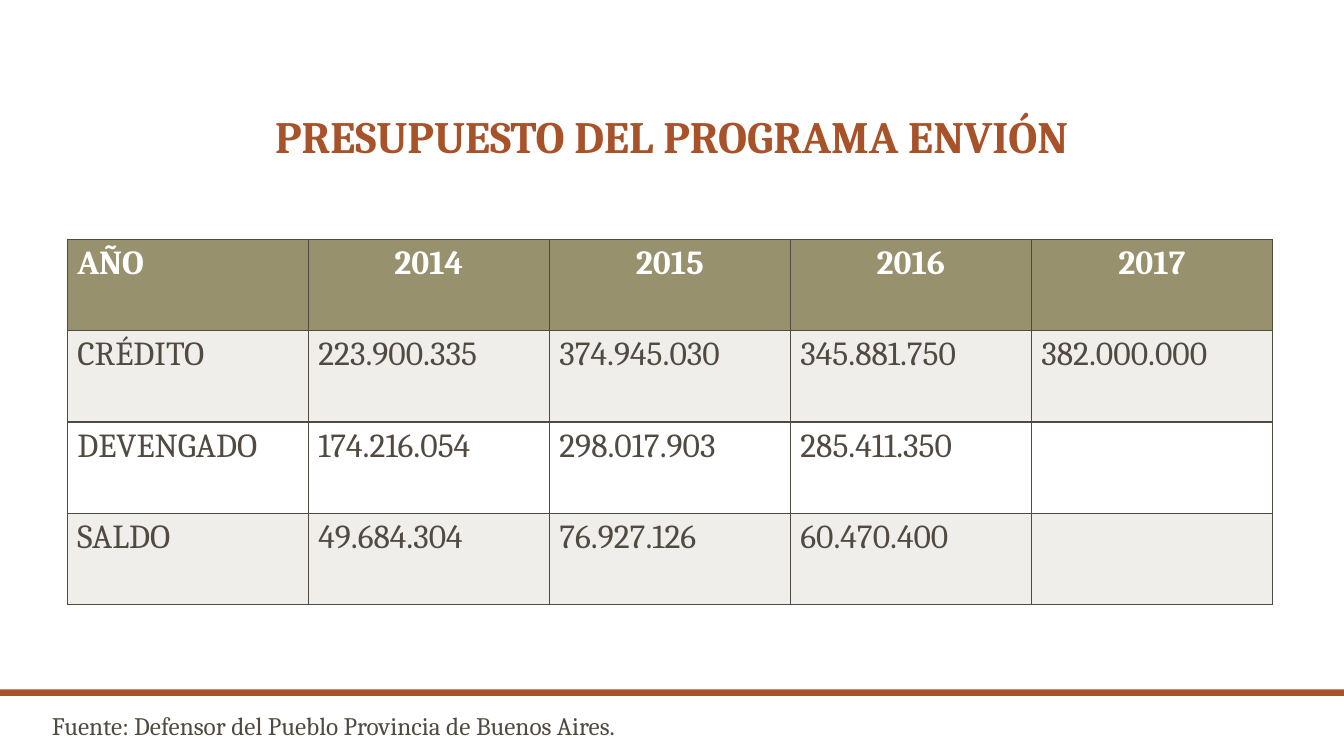
import pptx
import pptx.dml.color
import pptx.enum.shapes
import pptx.enum.text
import pptx.oxml
import pptx.oxml.ns
import pptx.util

Pt = pptx.util.Pt
ALIGN = pptx.enum.text.PP_ALIGN
ANCHOR = pptx.enum.text.MSO_ANCHOR
RUST, OLIVE, BROWN, PALE, WHITE = "A85229", "98916E", "514A40", "EFEEEB", "FFFFFF"
BUDGET = [
    ["AÑO", "2014", "2015", "2016", "2017"],
    ["CRÉDITO", "223.900.335", "374.945.030", "345.881.750", "382.000.000"],
    ["DEVENGADO", "174.216.054", "298.017.903", "285.411.350", ""],
    ["SALDO", "49.684.304", "76.927.126", "60.470.400", ""],
]


def color(value):
    """Turn a hex string into a colour."""
    return pptx.dml.color.RGBColor.from_string(value)


def apply_format(target, values):
    """Set every attribute named in the dict."""
    for name, value in values.items():
        setattr(target, name, value)


def write(frame, text, size, ink, bold=False, align=ALIGN.LEFT, spacing=1.0):
    """Write one formatted paragraph into a text frame."""
    para = frame.paragraphs[0]
    apply_format(para, {"alignment": align, "line_spacing": spacing})
    if text:
        span = para.add_run()
        span.text = text
        apply_format(span.font, {"name": "Cambria", "size": Pt(size), "bold": bold})
        span.font.color.rgb = color(ink)


def add_text(page, frame_at, text, anchor=ANCHOR.TOP, **style):
    """Add a wrapped text box."""
    box = page.shapes.add_textbox(*map(Pt, frame_at))
    apply_format(box.text_frame, {"word_wrap": True, "vertical_anchor": anchor})
    write(box.text_frame, text, **style)


def add_bar(page, frame_at, fill):
    """Add a plain filled rectangle."""
    kind = pptx.enum.shapes.MSO_SHAPE.RECTANGLE
    bar = page.shapes.add_shape(kind, *map(Pt, frame_at))
    bar.shadow.inherit = False
    bar.fill.solid()
    bar.fill.fore_color.rgb = color(fill)
    bar.line.fill.background()


def add_borders(cell, ink, width):
    """Draw a line on all four sides of a cell."""
    properties = cell._tc.get_or_add_tcPr()
    for side in "LRTB":
        properties.append(pptx.oxml.parse_xml(
            f'<a:ln{side} {pptx.oxml.ns.nsdecls("a")} w="{Pt(width)}">'
            f'<a:solidFill><a:srgbClr val="{ink}"/></a:solidFill></a:ln{side}>'))


def add_budget_table(page, left, top, column_width, row_height):
    """Add the budget table with its header and banded rows."""
    rows, columns = len(BUDGET), len(BUDGET[0])
    table = page.shapes.add_table(
        rows, columns, Pt(left), Pt(top),
        Pt(column_width * columns), Pt(row_height * rows)).table
    for column in table.columns:
        column.width = Pt(column_width)
    for i, values in enumerate(BUDGET):
        table.rows[i].height = Pt(row_height)
        header = i == 0
        fill = OLIVE if header else PALE if i % 2 else WHITE
        for j, text in enumerate(values):
            cell = table.cell(i, j)
            add_borders(cell, BROWN, 1)
            cell.fill.solid()
            cell.fill.fore_color.rgb = color(fill)
            write(cell.text_frame, text, 24, WHITE if header else BROWN, header,
                  ALIGN.CENTER if header and j else ALIGN.LEFT)


def main():
    """Build the budget slide."""
    deck = pptx.Presentation()
    apply_format(deck, {"slide_width": Pt(960), "slide_height": Pt(540)})
    page = deck.slides.add_slide(deck.slide_layouts[6])
    add_bar(page, (0, 492.5, 960, 4.5), RUST)
    add_text(page, (102, 30, 756, 90), "PRESUPUESTO DEL PROGRAMA ENVIÓN",
             ANCHOR.BOTTOM, size=32, ink=RUST, bold=True,
             align=ALIGN.CENTER, spacing=0.9)
    add_budget_table(page, 48, 171, 172.2, 65.2)
    add_text(page, (30, 503.5, 808.5, 29),
             "Fuente: Defensor del Pueblo Provincia de Buenos Aires.",
             size=18, ink=BROWN)
    deck.save("out.pptx")


if __name__ == "__main__":
    main()
